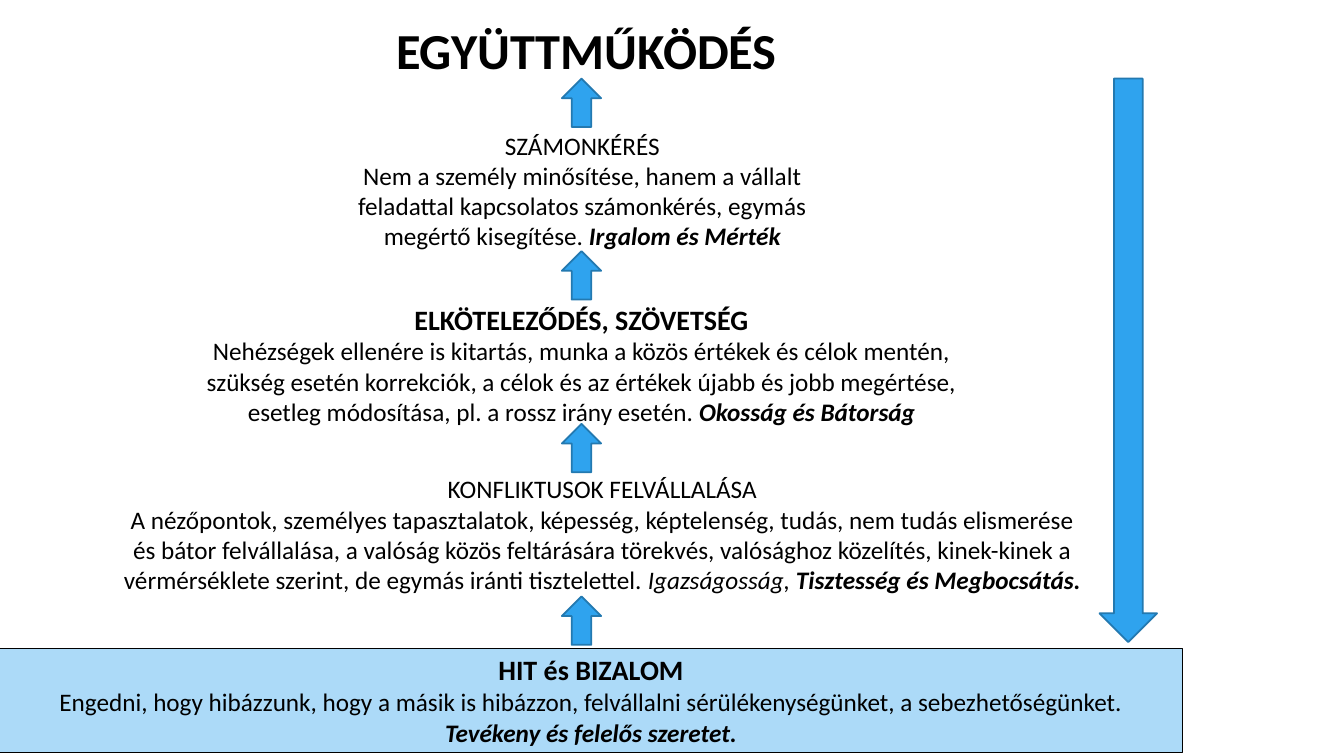
from dataclasses import dataclass

from pptx import Presentation
from pptx.dml.color import RGBColor
from pptx.enum.shapes import MSO_SHAPE
from pptx.enum.text import MSO_ANCHOR, MSO_AUTO_SIZE, PP_ALIGN
from pptx.util import Cm, Pt

UP, DOWN, RECT = MSO_SHAPE.UP_ARROW, MSO_SHAPE.DOWN_ARROW, MSO_SHAPE.RECTANGLE
MIDDLE, TOP = MSO_ANCHOR.MIDDLE, MSO_ANCHOR.TOP
CENTER = PP_ALIGN.CENTER
NO_FIT = MSO_AUTO_SIZE.NONE


@dataclass(frozen=True)
class Theme:
    font: str = "Calibri"
    text: RGBColor = RGBColor(0, 0, 0)
    arrow: RGBColor = RGBColor(0x2F, 0xA3, 0xEE)
    arrow_line: RGBColor = RGBColor(0x23, 0x79, 0xB0)
    base: RGBColor = RGBColor(0xAC, 0xDA, 0xF8)
    title: Pt = Pt(36)
    heading: Pt = Pt(20)
    body: Pt = Pt(18)


THEME = Theme()

# Levels from top to bottom: box (cm), bold heading?, heading, paragraphs of
# (text, bold, italic) runs
LEVELS = [
    ((8.31, 3.15, 12.73, 3.33), False, "SZÁMONKÉRÉS", [
        [("Nem a személy minősítése, hanem a vállalt feladattal kapcsolatos "
          "számonkérés, egymás megértő kisegítése. ", False, False),
         ("Irgalom és Mérték", True, True)]]),
    ((4.95, 7.49, 19.41, 3.43), True, "ELKÖTELEZŐDÉS, SZÖVETSÉG", [
        [("Nehézségek ellenére is kitartás, munka a közös értékek és célok "
          "mentén, szükség esetén korrekciók, a célok és az értékek újabb és "
          "jobb megértése, esetleg módosítása, pl. a rossz irány esetén. ",
          False, False),
         ("Okosság és Bátorság", True, True)]]),
    ((2.77, 11.81, 24.82, 3.33), False, "KONFLIKTUSOK FELVÁLLALÁSA", [
        [("A nézőpontok, személyes tapasztalatok, képesség, képtelenség, "
          "tudás, nem tudás elismerése és bátor felvállalása, a valóság közös "
          "feltárására törekvés, valósághoz közelítés, kinek-kinek a "
          "vérmérséklete szerint, de egymás iránti tisztelettel. ",
          False, False),
         ("Igazságosság, ", False, True),
         ("Tisztesség és Megbocsátás.", True, True)]]),
]
BASE = ((0, 16.33, 29.79, 2.64), True, "HIT és BIZALOM", [
    [("Engedni, hogy hibázzunk, hogy a másik is hibázzon, felvállalni "
      "sérülékenységünket, a sebezhetőségünket.", False, False)],
    [("Tevékeny és felelős szeretet.", True, True)]])

ARROW_LEFT, ARROW_TOP, ARROW_STEP = 14.16, 1.98, 4.35


def cm_box(box):
    return [Cm(v) for v in box]


def style(p, size):
    p.alignment = CENTER
    p.font.name, p.font.size = THEME.font, size
    p.font.color.rgb = THEME.text


def add_title(slide, box, text):
    sp = slide.shapes.title
    sp.left, sp.top, sp.width, sp.height = cm_box(box)
    tf = sp.text_frame
    tf.auto_size, tf.vertical_anchor = NO_FIT, MIDDLE
    tf.margin_left = Cm(2.49)
    tf.text = text
    p = tf.paragraphs[0]
    style(p, THEME.title)
    p.font.bold = True
    p.line_spacing = 0.9


def add_shape(slide, kind, box, fill, line, width):
    sp = slide.shapes.add_shape(kind, *cm_box(box))
    sp.shadow.inherit = False
    sp.fill.solid()
    sp.fill.fore_color.rgb = fill
    sp.line.color.rgb = line
    sp.line.width = Pt(width)
    return sp


def add_arrow(slide, kind, box):
    add_shape(slide, kind, box, THEME.arrow, THEME.arrow_line, 1.25)


def fill_level(tf, bold, heading, paragraphs):
    tf.word_wrap, tf.vertical_anchor = True, TOP
    tf.text = heading
    p = tf.paragraphs[0]
    style(p, THEME.heading if bold else THEME.body)
    p.font.bold = bold
    for runs in paragraphs:
        p = tf.add_paragraph()
        style(p, THEME.body)
        for text, is_bold, is_italic in runs:
            r = p.add_run()
            r.text = text
            r.font.bold, r.font.italic = is_bold, is_italic


def add_level(slide, box, *content):
    fill_level(slide.shapes.add_textbox(*cm_box(box)).text_frame, *content)


def add_base(slide, box, *content):
    sp = add_shape(slide, RECT, box, THEME.base, THEME.text, 0.75)
    fill_level(sp.text_frame, *content)


def main():
    prs = Presentation()
    prs.slide_width, prs.slide_height = Cm(33.87), Cm(19.05)
    slide = prs.slides.add_slide(prs.slide_layouts[5])

    # Goal, supporting levels and foundation
    add_title(slide, (1.09, 0.15, 25.15, 2.39), "EGYÜTTMŰKÖDÉS")
    for level in LEVELS:
        add_level(slide, *level)
    add_base(slide, *BASE)

    # One step up above each level, one long way down at the side
    for i in range(len(LEVELS) + 1):
        top = ARROW_TOP + i * ARROW_STEP
        add_arrow(slide, UP, (ARROW_LEFT, top, 0.99, 1.22))
    add_arrow(slide, DOWN, (27.71, ARROW_TOP, 1.45, 14.2))

    prs.save("out.pptx")


if __name__ == "__main__":
    main()
